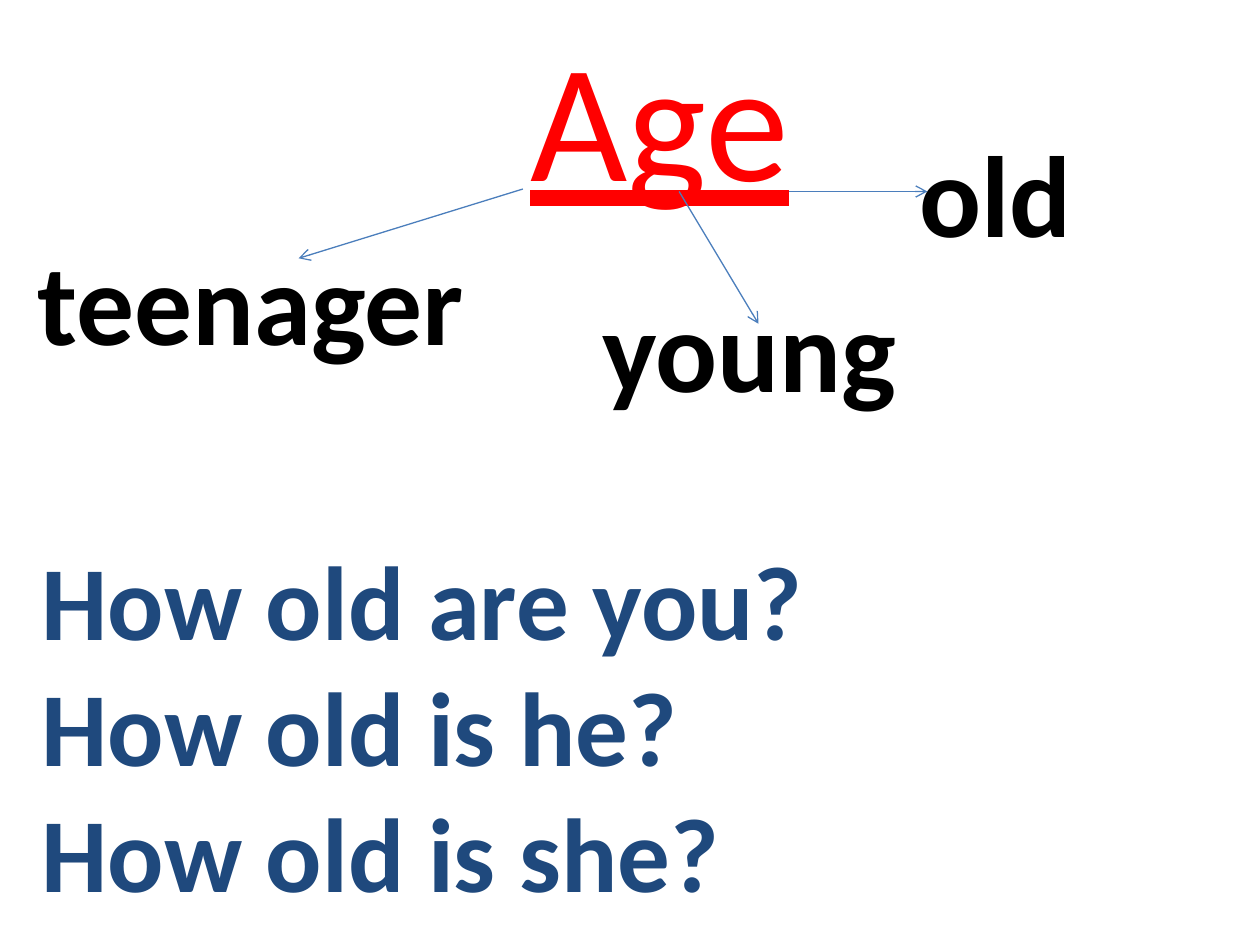
from dataclasses import dataclass

from lxml.etree import SubElement
from pptx import Presentation
from pptx.dml.color import RGBColor
from pptx.enum.shapes import MSO_CONNECTOR as Connector
from pptx.enum.text import MSO_ANCHOR as Anchor, MSO_AUTO_SIZE as AutoSize, PP_ALIGN as Align
from pptx.oxml.ns import qn
from pptx.util import Emu, Pt

EMU_PER_PX = 9144  # 100 px to the inch


def px(length):
    return Emu(length * EMU_PER_PX)


@dataclass(frozen=True)
class Theme:
    font: str = "Calibri"
    title_color: str = "FF0000"
    word_color: str = "000000"
    question_color: str = "1F497D"
    arrow_color: str = "4B7EBC"
    title_size: int = 96
    word_size: int = 66
    question_size: int = 60
    arrow_width: float = 0.75


class SlideBuilder:
    def __init__(self, slide, theme):
        self.slide = slide
        self.theme = theme

    def set_text(self, shape, lines, size, color, bold=False, underline=False):
        frame = shape.text_frame
        frame.text = "\n".join(lines)
        frame.word_wrap = False
        frame.auto_size = AutoSize.NONE
        frame.vertical_anchor = Anchor.TOP
        for paragraph in frame.paragraphs:
            paragraph.alignment = Align.LEFT
            paragraph.space_before = Pt(0)
            for run in paragraph.runs:
                font = run.font
                font.name = self.theme.font
                font.size = Pt(size)
                font.bold = bold
                font.underline = underline
                font.color.rgb = RGBColor.from_string(color)

    def place(self, shape, left, top, width, height):
        shape.left, shape.top = px(left), px(top)
        shape.width, shape.height = px(width), px(height)

    def title(self, text, *box):
        shape = self.slide.shapes.title
        self.place(shape, *box)
        self.set_text(shape, [text], self.theme.title_size, self.theme.title_color, underline=True)

    def questions(self, lines, *box):
        shape = self.slide.placeholders[1]
        self.place(shape, *box)
        self.set_text(shape, lines, self.theme.question_size, self.theme.question_color, bold=True)
        for paragraph in shape.text_frame.paragraphs:
            properties = paragraph._p.get_or_add_pPr()
            properties.set("marL", "0")
            properties.set("indent", "0")
            SubElement(properties, qn("a:buNone"))

    def word(self, text, *box):
        shape = self.slide.shapes.add_textbox(*map(px, box))
        self.set_text(shape, [text], self.theme.word_size, self.theme.word_color, bold=True)

    def arrow(self, *ends):
        connector = self.slide.shapes.add_connector(Connector.STRAIGHT, *map(px, ends))
        connector.line.color.rgb = RGBColor.from_string(self.theme.arrow_color)
        connector.line.width = Pt(self.theme.arrow_width)
        SubElement(connector.line._get_or_add_ln(), qn("a:tailEnd"), type="arrow")
        SubElement(connector._element.spPr, qn("a:effectLst"))


def main():
    presentation = Presentation()
    presentation.slide_width, presentation.slide_height = px(1000), px(750)
    slide = presentation.slides.add_slide(presentation.slide_layouts[1])
    builder = SlideBuilder(slide, Theme())

    # Topic and questions
    builder.title("Age", 411, 6, 227, 172)
    builder.questions(
        ["How old are you?", "How old is he?", "How old is she?"], 23, 420, 631, 313
    )

    # Words around the topic
    builder.word("young", 468, 215, 256, 121)
    builder.word("teenager", 20, 178, 362, 121)
    builder.word("old", 720, 92, 142, 121)

    # Arrows from the topic to each word
    builder.arrow(415, 150, 237, 205)
    builder.arrow(539, 152, 602, 257)
    builder.arrow(626, 152, 736, 152)

    presentation.save("out.pptx")


if __name__ == "__main__":
    main()
